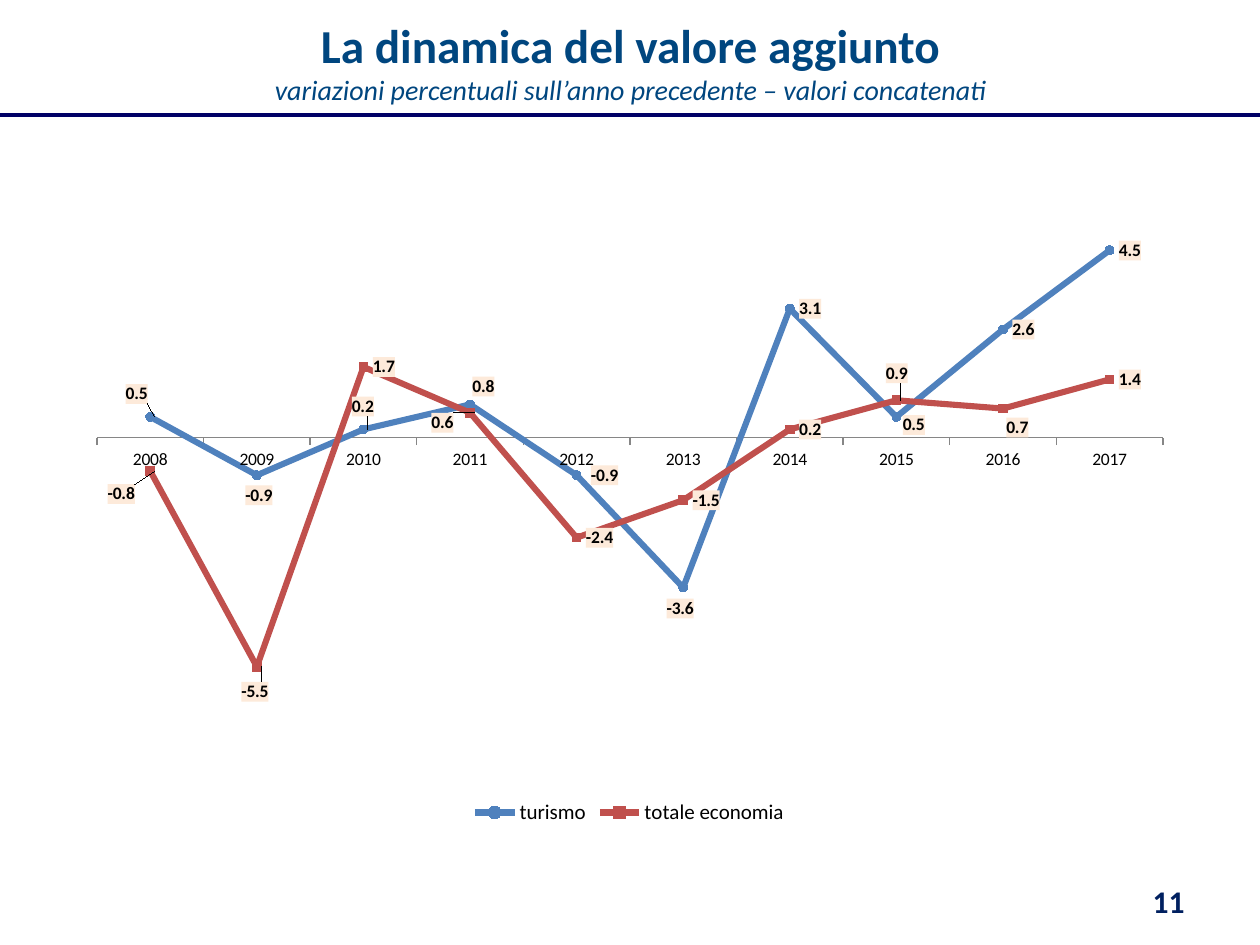
from copy import deepcopy
from dataclasses import dataclass

from lxml.etree import SubElement
from pptx import Presentation
from pptx.chart.data import CategoryChartData
from pptx.dml.color import RGBColor
from pptx.enum.chart import (XL_CHART_TYPE, XL_LABEL_POSITION, XL_LEGEND_POSITION,
                             XL_MARKER_STYLE, XL_TICK_MARK)
from pptx.enum.shapes import MSO_CONNECTOR
from pptx.enum.text import MSO_ANCHOR, MSO_AUTO_SIZE, PP_ALIGN
from pptx.oxml import parse_xml
from pptx.oxml.ns import nsdecls, qn
from pptx.util import Emu, Pt

PX_PER_INCH = 126


@dataclass(frozen=True)
class Theme:
    font: str = "Calibri"
    title: str = "00467F"
    rule: str = "000066"
    number: str = "002060"
    text: str = "000000"
    axis: str = "868686"
    label_fill: str = "FDEADA"
    title_pt: int = 27
    subtitle_pt: int = 16
    number_pt: int = 18
    legend_pt: int = 12
    chart_pt: int = 10


@dataclass(frozen=True)
class Box:
    x: int
    y: int
    w: int
    h: int

    def emu(self) -> tuple:
        return tuple(px(n) for n in (self.x, self.y, self.w, self.h))


@dataclass(frozen=True)
class LineSeries:
    name: str
    values: tuple
    color: str
    marker: XL_MARKER_STYLE
    label_shifts: dict


THEME = Theme()
SLIDE = Box(0, 0, 1260, 945)
TITLE = Box(95, 6, 1071, 110)
CHART = Box(74, 175, 1111, 655)
PLOT = Box(97, 188, 1066, 583)
NUMBER = Box(903, 876, 294, 50)
RULE_Y = 115
YEARS = [str(year) for year in range(2008, 2018)]
SERIES = (
    LineSeries("turismo", (0.5, -0.9, 0.2, 0.8, -0.9, -3.6, 3.1, 0.5, 2.6, 4.5),
               "4F81BD", XL_MARKER_STYLE.CIRCLE,
               {0: (-34, -23), 1: (-21, 20), 2: (-21, -23), 3: (-7, -18),
                4: (5, 0), 5: (-26, 21), 7: (-3, 8)}),
    LineSeries("totale economia", (-0.8, -5.5, 1.7, 0.6, -2.4, -1.5, 0.2, 0.9, 0.7, 1.4),
               "C0504D", XL_MARKER_STYLE.SQUARE,
               {0: (-52, 23), 1: (-25, 25), 3: (-48, 10), 7: (-20, -27), 8: (-6, 19)}),
)


def px(n: int) -> Emu:
    return Emu(round(n * 914400 / PX_PER_INCH))


def rgb(color: str) -> RGBColor:
    return RGBColor.from_string(color)


def set_font(font, size: int, color: str, bold: bool = False, italic: bool = False) -> None:
    font.name, font.size, font.bold, font.italic = THEME.font, Pt(size), bold, italic
    font.color.rgb = rgb(color)


def add_title(s) -> None:
    sp = s.shapes.title
    sp.left, sp.top, sp.width, sp.height = TITLE.emu()
    tf = sp.text_frame
    tf.text = ("La dinamica del valore aggiunto\v"
               "variazioni percentuali sull’anno precedente – valori concatenati")
    tf.auto_size, tf.vertical_anchor = MSO_AUTO_SIZE.NONE, MSO_ANCHOR.MIDDLE
    p = tf.paragraphs[0]
    p.alignment = PP_ALIGN.CENTER
    heading, subtitle = p.runs
    set_font(heading.font, THEME.title_pt, THEME.title, bold=True)
    set_font(subtitle.font, THEME.subtitle_pt, THEME.title, italic=True)
    SubElement(p._p.find(qn("a:br")), qn("a:rPr"), sz=str(THEME.title_pt * 100))


def add_rule(s) -> None:
    line = s.shapes.add_connector(MSO_CONNECTOR.STRAIGHT, 0, px(RULE_Y), px(SLIDE.w), px(RULE_Y))
    line.line.color.rgb = rgb(THEME.rule)
    line.line.width = Pt(2.5)
    SubElement(line._element.spPr, qn("a:effectLst"))


def add_number(s, number: str) -> None:
    tf = s.shapes.add_textbox(*NUMBER.emu()).text_frame
    tf.word_wrap, tf.vertical_anchor = True, MSO_ANCHOR.MIDDLE
    tf.text = number
    p = tf.paragraphs[0]
    p.alignment = PP_ALIGN.RIGHT
    set_font(p.runs[0].font, THEME.number_pt, THEME.number, bold=True)


def manual_layout(**values):
    items = "".join(f'<c:{tag} val="{val}"/>' for tag, val in values.items())
    return parse_xml(f'<c:layout {nsdecls("c")}><c:manualLayout>{items}'
                     '</c:manualLayout></c:layout>')


def place_plot(chart) -> None:
    area = chart._chartSpace.chart.plotArea
    for old in area.findall(qn("c:layout")):
        area.remove(old)
    area.insert(0, manual_layout(
        layoutTarget="inner", xMode="edge", yMode="edge",
        x=round((PLOT.x - CHART.x) / CHART.w, 4), y=round((PLOT.y - CHART.y) / CHART.h, 4),
        w=round(PLOT.w / CHART.w, 4), h=round(PLOT.h / CHART.h, 4)))


def label_series(series, shifts: dict) -> None:
    labels = series.data_labels
    labels.show_value = True
    labels.number_format, labels.number_format_is_linked = "0.0", False
    labels.position = XL_LABEL_POSITION.RIGHT
    set_font(labels.font, THEME.chart_pt, THEME.text, bold=True)
    root = labels._element
    root.find(qn("c:txPr")).addprevious(parse_xml(
        f'<c:spPr {nsdecls("c", "a")}><a:solidFill><a:srgbClr val="{THEME.label_fill}"/>'
        '</a:solidFill></c:spPr>'))
    shared = [el for el in root if el.tag != qn("c:showLeaderLines")]
    for pos, (idx, (dx, dy)) in enumerate(shifts.items()):
        label = parse_xml(f'<c:dLbl {nsdecls("c")}><c:idx val="{idx}"/></c:dLbl>')
        label.append(manual_layout(x=round(dx / CHART.w, 4), y=round(dy / CHART.h, 4)))
        label.extend(deepcopy(shared))
        root.insert(pos, label)


def style_series(series, spec: LineSeries) -> None:
    series.smooth = False
    series.format.line.color.rgb = rgb(spec.color)
    series.format.line.width = Pt(3.5)
    series.marker.style, series.marker.size = spec.marker, 5
    for part in (series.marker.format.fill, series.marker.format.line.fill):
        part.solid()
        part.fore_color.rgb = rgb(spec.color)
    label_series(series, spec.label_shifts)


def add_line_chart(s) -> None:
    data = CategoryChartData(number_format="0.0")
    data.categories = YEARS
    for spec in SERIES:
        data.add_series(spec.name, spec.values)
    chart = s.shapes.add_chart(XL_CHART_TYPE.LINE_MARKERS, *CHART.emu(), data).chart
    set_font(chart.font, THEME.chart_pt, THEME.text)
    chart.has_title = False
    chart.has_legend = True
    chart.legend.position = XL_LEGEND_POSITION.BOTTOM
    chart.legend.include_in_layout = False
    set_font(chart.legend.font, THEME.legend_pt, THEME.text)
    cat, val = chart.category_axis, chart.value_axis
    cat.major_tick_mark = XL_TICK_MARK.OUTSIDE
    cat.format.line.color.rgb = rgb(THEME.axis)
    cat.format.line.width = Pt(0.75)
    val.minimum_scale, val.maximum_scale = -8, 6
    val.has_major_gridlines = False
    val.visible = False
    chart.plots[0].vary_by_categories = False
    place_plot(chart)
    for series, spec in zip(chart.plots[0].series, SERIES):
        style_series(series, spec)


def main() -> None:
    prs = Presentation()
    prs.slide_width, prs.slide_height = px(SLIDE.w), px(SLIDE.h)
    s = prs.slides.add_slide(prs.slide_layouts[5])
    add_title(s)
    add_rule(s)
    add_line_chart(s)
    add_number(s, "11")
    prs.save("out.pptx")


if __name__ == "__main__":
    main()
